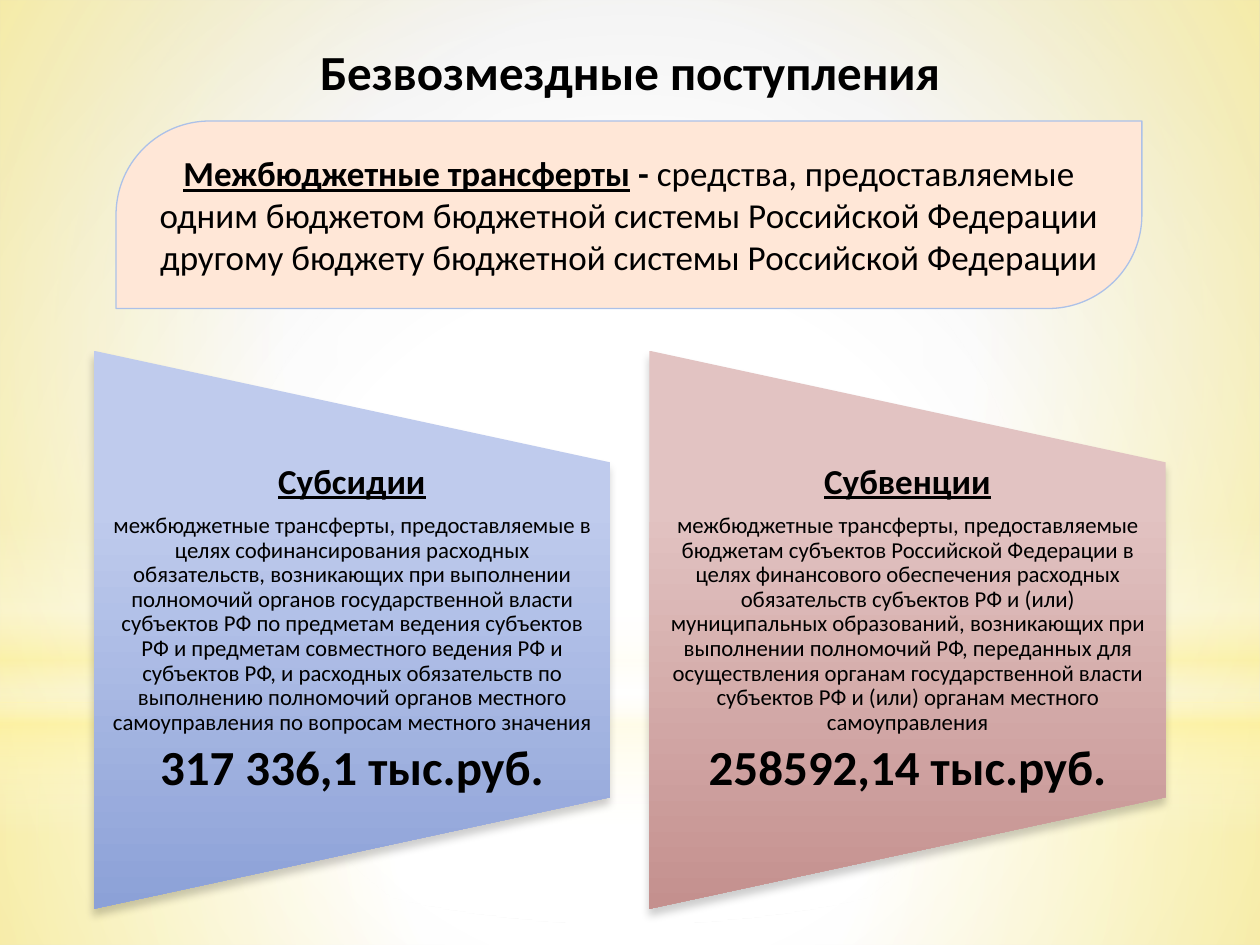
from lxml import etree
from pptx import Presentation
from pptx.dml.color import RGBColor
from pptx.enum.shapes import MSO_SHAPE
from pptx.enum.text import MSO_ANCHOR, PP_ALIGN
from pptx.oxml import parse_xml
from pptx.oxml.ns import nsdecls, qn
from pptx.util import Cm, Pt

RECT, OVAL = MSO_SHAPE.RECTANGLE, MSO_SHAPE.OVAL
DIAGONAL, FUNNEL = MSO_SHAPE.ROUND_2_DIAG_RECTANGLE, MSO_SHAPE.FLOWCHART_MANUAL_OPERATION
CENTER, TOP, MIDDLE = PP_ALIGN.CENTER, MSO_ANCHOR.TOP, MSO_ANCHOR.MIDDLE

BLACK = RGBColor(0x00, 0x00, 0x00)
WHITE = RGBColor(0xFF, 0xFF, 0xFF)
GREY = RGBColor(0xD1, 0xD1, 0xD1)
YELLOW = RGBColor(0xFF, 0xF3, 0x9D)
PEACH = RGBColor(0xFF, 0xE7, 0xD7)
PALE_BLUE = RGBColor(0xAC, 0xC1, 0xE8)
BLUE_TOP, BLUE_BOTTOM = RGBColor(0xBF, 0xCB, 0xED), RGBColor(0x8C, 0xA1, 0xD7)
ROSE_TOP, ROSE_BOTTOM = RGBColor(0xE2, 0xC3, 0xC2), RGBColor(0xC4, 0x90, 0x8E)

MIDPOINT = (50, 50, 50, 50)
WIDTH, HEIGHT, HORIZON = 25.4, 19.05, 14.17

GRANTS = [
    ("Субсидии",
     "межбюджетные трансферты, предоставляемые в целях софинансирования расходных "
     "обязательств, возникающих при выполнении полномочий органов государственной власти "
     "субъектов РФ по предметам ведения субъектов РФ и предметам совместного ведения РФ и "
     "субъектов РФ, и расходных обязательств по выполнению полномочий органов местного "
     "самоуправления по вопросам местного значения",
     "317 336,1 тыс.руб.", BLUE_TOP, BLUE_BOTTOM),
    ("Субвенции",
     "межбюджетные трансферты, предоставляемые бюджетам субъектов Российской Федерации в "
     "целях финансового обеспечения расходных обязательств субъектов РФ и (или) "
     "муниципальных образований, возникающих при выполнении полномочий РФ, переданных для "
     "осуществления органам государственной власти субъектов РФ и (или) органам местного "
     "самоуправления",
     "258592,14 тыс.руб.", ROSE_TOP, ROSE_BOTTOM),
]


class Deck:
    """Holds the style and the current slide, and draws each kind of element."""

    font = "Calibri"

    def __init__(self):
        self.prs = Presentation()
        self.prs.slide_width, self.prs.slide_height = Cm(WIDTH), Cm(HEIGHT)
        self.s = self.prs.slides.add_slide(self.prs.slide_layouts[5])

    def gradient(self, solid, stops, focus=None):
        grad = parse_xml(f'<a:gradFill {nsdecls("a")} rotWithShape="0"/>')
        gs_lst = etree.SubElement(grad, qn("a:gsLst"))
        for pos, color, alpha in stops:
            gs = etree.SubElement(gs_lst, qn("a:gs"), pos=str(pos * 1000))
            clr = etree.SubElement(gs, qn("a:srgbClr"), val=str(color))
            if alpha < 100:
                etree.SubElement(clr, qn("a:alpha"), val=str(alpha * 1000))
        if focus:
            circle = etree.SubElement(grad, qn("a:path"), {"path": "circle"})
            sides = {k: str(v * 1000) for k, v in zip("ltrb", focus)}
            etree.SubElement(circle, qn("a:fillToRect"), sides)
        else:
            etree.SubElement(grad, qn("a:lin"), ang="5400000", scaled="0")
        solid.getparent().replace(solid, grad)

    def background(self, stops, focus):
        self.s.background.fill.solid()
        self.gradient(self.s.element.xpath(".//p:bgPr/a:solidFill")[0], stops, focus)

    def shape(self, kind, box, fill=WHITE):
        sp = self.s.shapes.add_shape(kind, *map(Cm, box))
        sp.shadow.inherit = False
        sp.fill.solid()
        sp.fill.fore_color.rgb = fill
        sp.line.fill.background()
        return sp

    def glow(self, kind, box, stops, focus=None):
        sp = self.shape(kind, box)
        self.gradient(sp.element.spPr.find(qn("a:solidFill")), stops, focus)
        return sp

    def cast_shadow(self, sp):
        effects = sp.element.spPr.find(qn("a:effectLst"))
        shadow = etree.SubElement(effects, qn("a:outerShdw"), blurRad=str(Pt(5)),
                                  dist=str(Pt(4)), dir="5400000", rotWithShape="0")
        clr = etree.SubElement(shadow, qn("a:srgbClr"), val=str(BLACK))
        etree.SubElement(clr, qn("a:alpha"), val="20000")

    def run(self, p, text, size, bold=False, underline=False):
        r = p.add_run()
        r.text = text
        r.font.name, r.font.size = self.font, Pt(size)
        r.font.bold, r.font.underline = bold, underline
        r.font.color.rgb = BLACK

    def title(self, text, box):
        sp = self.s.shapes.title
        self.s.shapes.element.append(sp.element)
        sp.left, sp.top, sp.width, sp.height = map(Cm, box)
        tf = sp.text_frame
        tf.word_wrap, tf.vertical_anchor = False, TOP
        p = tf.paragraphs[0]
        p.alignment = CENTER
        self.run(p, text, 28, bold=True)

    def definition(self, term, dash, text, box):
        sp = self.shape(DIAGONAL, box, PEACH)
        sp.adjustments[0], sp.adjustments[1] = 0.5, 0
        sp.line.color.rgb, sp.line.width = PALE_BLUE, Pt(0.75)
        tf = sp.text_frame
        tf.word_wrap, tf.vertical_anchor = True, MIDDLE
        p = tf.paragraphs[0]
        p.alignment = CENTER
        self.run(p, term, 20, bold=True, underline=True)
        self.run(p, dash, 20, bold=True)
        self.run(p, text, 20)

    def grant(self, left, name, text, amount, top_color, bottom_color):
        sp = self.glow(FUNNEL, (left, 7.49, 11.25, 10.41),
                       [(28, top_color, 100), (100, bottom_color, 100)])
        sp.rotation = 270
        self.cast_shadow(sp)
        label = self.s.shapes.add_textbox(*map(Cm, (left + 0.42, 9.32, 10.41, 6.76)))
        tf = label.text_frame
        tf.word_wrap, tf.vertical_anchor = True, MIDDLE
        tf.margin_left = tf.margin_right = Cm(0.36)
        tf.margin_top = tf.margin_bottom = 0
        rows = [(name, 20, True, True), (text, 13, False, False), (amount, 28, True, False)]
        for i, row in enumerate(rows):
            p = tf.add_paragraph() if i else tf.paragraphs[0]
            p.alignment, p.line_spacing, p.space_after = CENTER, 0.9, Pt(row[1] * 0.35)
            self.run(p, *row)


def main():
    deck = Deck()
    deck.background([(0, WHITE, 100), (42, WHITE, 100), (100, GREY, 100)], (24, 44, 24, 12))
    deck.glow(RECT, (0, HORIZON, WIDTH, HEIGHT - HORIZON),
              [(0, WHITE, 91), (37, WHITE, 76), (100, YELLOW, 79)], MIDPOINT)
    deck.glow(RECT, (0, 0, WIDTH, HORIZON),
              [(0, WHITE, 89), (48, WHITE, 62), (100, YELLOW, 79)], MIDPOINT)
    deck.glow(RECT, (0, 10.46, WIDTH, 6.35),
              [(0, WHITE, 0), (29, WHITE, 30), (45, YELLOW, 40),
               (55, WHITE, 26), (65, YELLOW, 60), (100, WHITE, 0)])
    deck.glow(OVAL, (0, 4.45, WIDTH, HORIZON), [(0, WHITE, 100), (56, WHITE, 0)], MIDPOINT)
    deck.title("Безвозмездные поступления", (6.12, 0.71, 13.16, 1.45))
    deck.definition("Межбюджетные трансферты", " - ",
                    "средства, предоставляемые одним бюджетом бюджетной системы Российской "
                    "Федерации другому бюджету бюджетной системы Российской Федерации",
                    (2.34, 2.44, 20.68, 3.78))
    for i, grant in enumerate(GRANTS):
        deck.grant(1.47 + i * 11.2, *grant)
    deck.prs.save("out.pptx")


if __name__ == "__main__":
    main()
